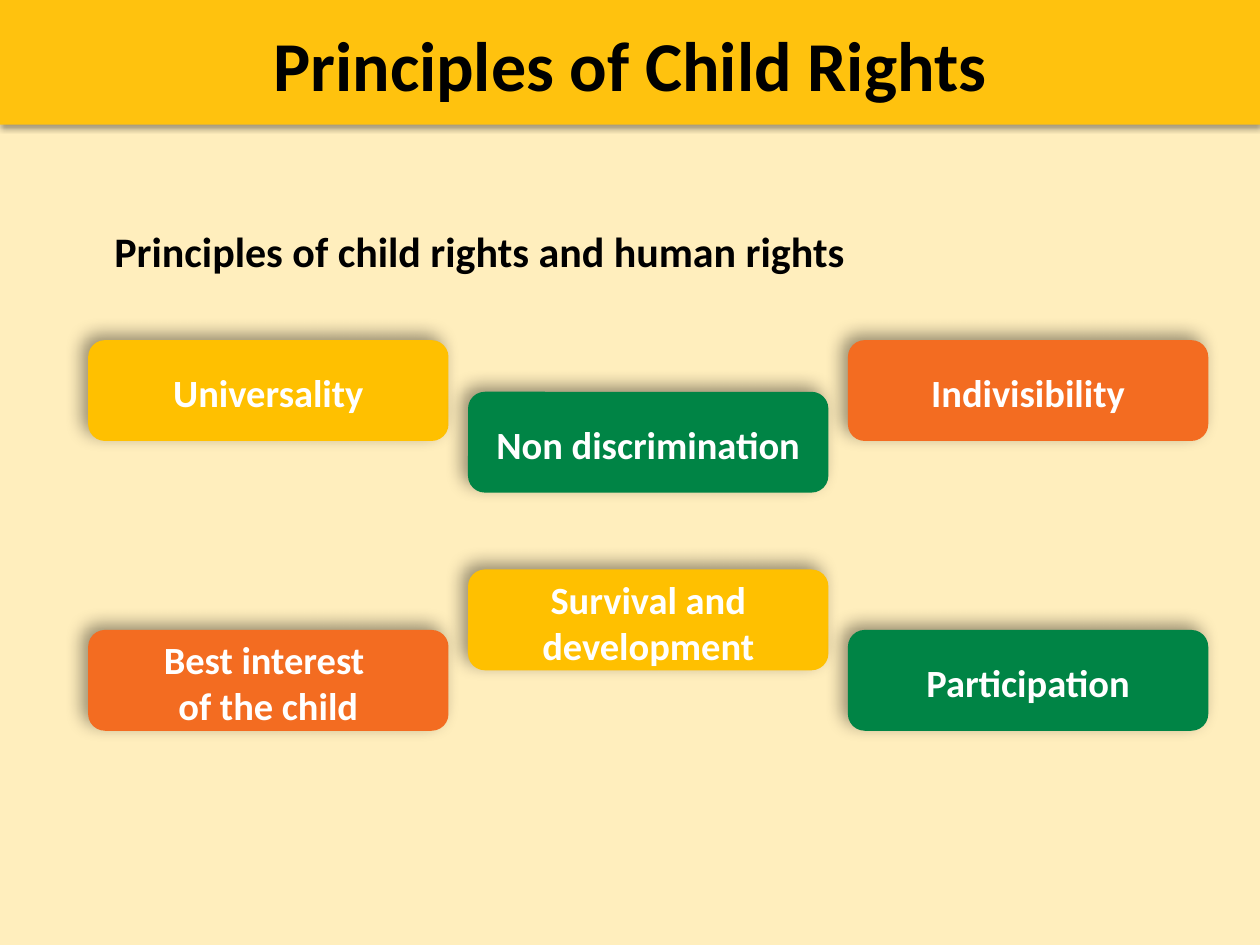
from lxml import etree
from pptx import Presentation
from pptx.dml.color import RGBColor
from pptx.enum.shapes import MSO_SHAPE as Shape
from pptx.enum.text import MSO_ANCHOR as Anchor, PP_ALIGN as Align
from pptx.oxml.ns import qn
from pptx.util import Inches, Pt

COLORS = {
    "page": "FFEEBD", "band": "FFC20E", "black": "000000", "white": "FFFFFF",
    "gold": "FFC000", "green": "008445", "orange": "F36C21",
}
TITLE = "Principles of Child Rights"
HEAD = "Principles of child rights and human rights"
# lines of text, colour, column, top, rows the text takes
CARDS = [
    (["Universality"], "gold", 0, 2.7, 1),
    (["Non discrimination"], "green", 1, 3.11, 1),
    (["Indivisibility"], "orange", 2, 2.7, 1),
    (["Best interest ", "of the child"], "orange", 0, 5, 2),
    (["Survival and development"], "gold", 1, 4.52, 2),
    (["Participation"], "green", 2, 5, 1),
]
LEFT, STEP, CARD_W, CARD_H = 0.7, 3.015, 2.86, 0.8
ROW_H, PAD = 0.37, 0.1
DROP = 0.015  # text sits slightly below the card's middle


def rgb(name):
    return RGBColor.from_string(COLORS[name])


def cast(shape, alpha, blur, dist, angle):
    """Give the shape an outer shadow: opacity in %, points, degrees."""
    shape.shadow.inherit = False
    effects = shape._element.spPr.find(qn("a:effectLst"))
    outer = etree.SubElement(
        effects, qn("a:outerShdw"), blurRad=str(Pt(blur)), dist=str(Pt(dist)),
        dir=str(angle * 60000), rotWithShape="0")
    tint = etree.SubElement(outer, qn("a:srgbClr"), val=COLORS["black"])
    etree.SubElement(tint, qn("a:alpha"), val=str(alpha * 1000))


def add_block(slide, kind, box, color, shadow):
    block = slide.shapes.add_shape(kind, *map(Inches, box))
    block.fill.solid()
    block.fill.fore_color.rgb = rgb(color)
    block.line.fill.background()
    cast(block, *shadow)
    return block


def write(shape, lines, size, color, align):
    frame = shape.text_frame
    frame.word_wrap = True
    frame.vertical_anchor = Anchor.MIDDLE
    para = frame.paragraphs[0]
    para.alignment = align
    for i, line in enumerate(lines):
        if i:
            para.add_line_break()
        run = para.add_run()
        run.text = line
        font = run.font
        font.name, font.size, font.bold = "Calibri", Pt(size), True
        font.color.rgb = rgb(color)
    return para


def add_text(slide, box, *style):
    return write(slide.shapes.add_textbox(*map(Inches, box)), *style)


def add_card(slide, lines, color, col, top, rows):
    left = LEFT + col * STEP
    add_block(slide, Shape.ROUNDED_RECTANGLE, (left, top, CARD_W, CARD_H),
              color, (40, 10, 5, 225))
    high = rows * ROW_H + PAD
    y = top + (CARD_H - high) / 2 + DROP
    add_text(slide, (left, y, CARD_W, high), lines, 22, "white", Align.CENTER)


def main():
    prs = Presentation()
    prs.slide_width, prs.slide_height = Inches(10), Inches(7.5)
    slide = prs.slides.add_slide(prs.slide_layouts[5])
    slide.background.fill.solid()
    slide.background.fill.fore_color.rgb = rgb("page")

    band = add_block(slide, Shape.RECTANGLE, (0, 0, 10, 0.99), "band",
                     (35, 3.1, 1.8, 90))
    title = slide.shapes.title
    title._element.addprevious(band._element)  # the band lies behind the title
    title.left, title.top = Inches(0), Inches(0.12)
    title.width, title.height = Inches(10), Inches(0.77)
    write(title, [TITLE], 40, "black", Align.CENTER)

    head = add_text(slide, (0.81, 1.74, 7.47, 0.5), [HEAD], 24, "black", Align.LEFT)
    head.space_after = Pt(12)
    for card in CARDS:
        add_card(slide, *card)
    prs.save("out.pptx")


if __name__ == "__main__":
    main()
